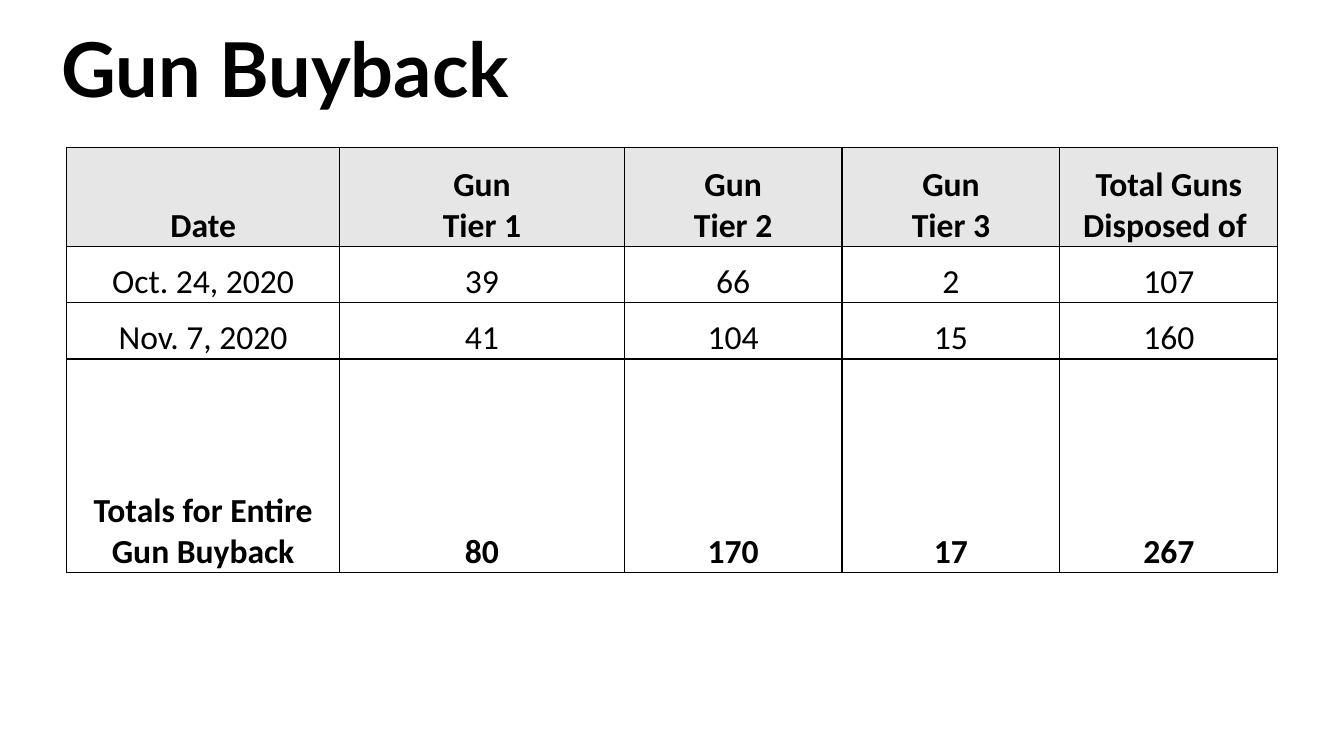
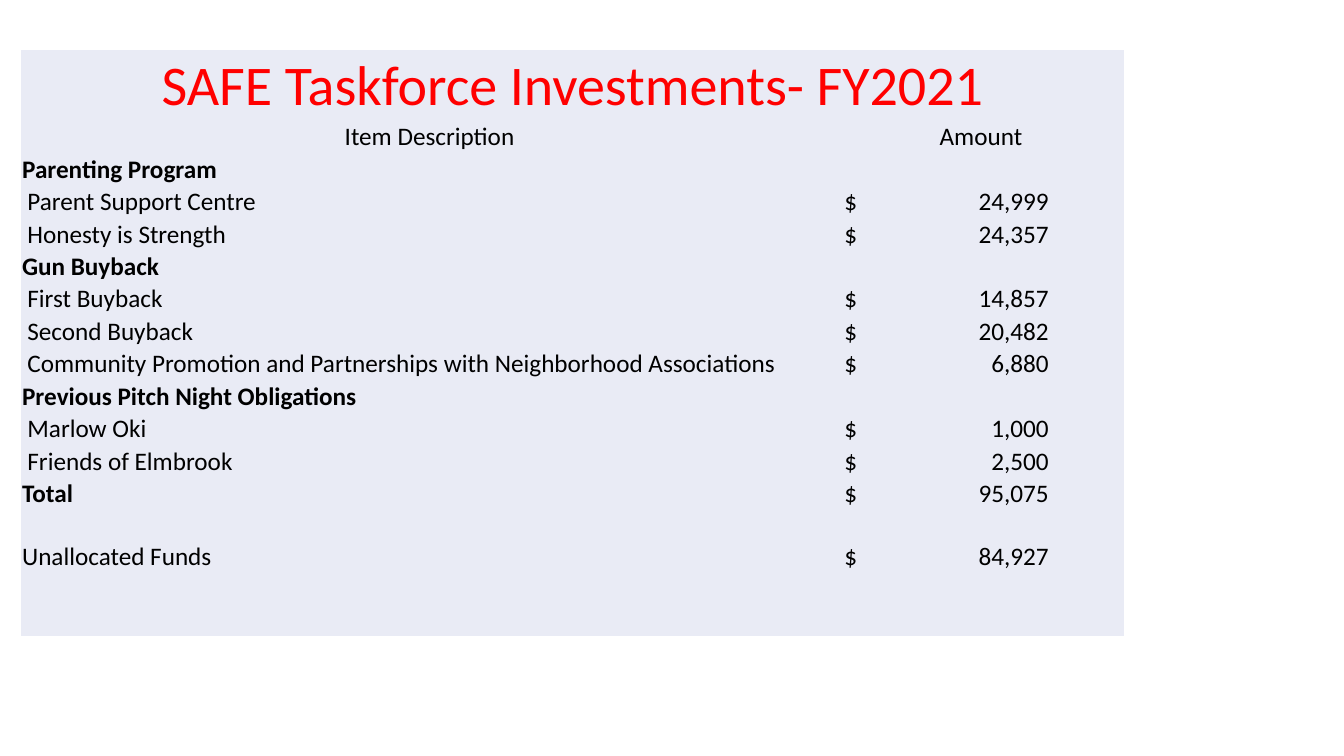
"""Build two slides: gun buyback counts and taskforce investments."""
from lxml import etree
from pptx import Presentation
from pptx.dml.color import RGBColor
from pptx.enum.text import MSO_ANCHOR, PP_ALIGN
from pptx.oxml.ns import qn
from pptx.util import Pt

LEFT, MID = PP_ALIGN.LEFT, PP_ALIGN.CENTER
LOW, HALF = MSO_ANCHOR.BOTTOM, MSO_ANCHOR.MIDDLE
BLACK, RED, GREY, PALE = "000000", "FF0000", "E7E6E6", "E9EBF5"
BODY, HEAD = "Calibri", "Lato"
PLAIN = "{2D5ABB26-0587-4C30-8999-92F81FD0307C}"
EDGES = ("a:lnL", "a:lnR", "a:lnT", "a:lnB")

TITLE = "Gun Buyback"
COUNTS = [
    ("Date", "Gun\nTier 1", "Gun\nTier 2", "Gun\nTier 3", "Total Guns Disposed of "),
    ("Oct. 24, 2020", "39", "66", "2", "107"),
    ("Nov. 7, 2020", "41", "104", "15", "160"),
    ("Totals for Entire Gun Buyback", "80", "170", "17", "267"),
]
COUNT_COLS = [195.2, 203.2] + [155.6] * 3
COUNT_ROWS = [70.4, 40.3, 40.3, 152.6]

FUNDS = "SAFE Taskforce Investments- FY2021"
HEADS = ("Item Description", "Amount")
GROUPS = [
    ("Parenting Program", "", [
        ("Parent Support Centre", "24,999"),
        ("Honesty is Strength", "24,357")]),
    ("Gun Buyback", "", [
        ("First Buyback", "14,857"),
        ("Second Buyback", "20,482"),
        ("Community Promotion and Partnerships with Neighborhood Associations", "6,880")]),
    ("Previous Pitch Night Obligations", "", [
        ("Marlow Oki", "1,000"),
        ("Friends of Elmbrook", "2,500")]),
    ("Total", "95,075", []),
]
REST = ("Unallocated Funds", "84,927")
FUND_COLS = [583.5, 204.2]
FUND_ROWS = [49.7] + [23.2] * 12 + [44.6, 45.7]
STEP, STOP = 4.5, 146


def tint(code):
    return RGBColor.from_string(code)


def write(frame, text, size, font=BODY, color=BLACK, bold=False, align=LEFT):
    para = frame.paragraphs[0]
    para.alignment = align
    for i, line in enumerate(text.split("\n")):
        if i:
            para.add_line_break()
        run = para.add_run()
        run.text = line
        face = run.font
        face.size, face.name, face.bold = Pt(size), font, bold
        face.color.rgb = tint(color)
    return para


def grid(slide, x, y, cols, rows, pad):
    frame = slide.shapes.add_table(
        len(rows), len(cols), Pt(x), Pt(y), Pt(sum(cols)), Pt(sum(rows)))
    table = frame.table
    table.first_row = table.horz_banding = False
    table._tbl.tblPr.find(qn("a:tableStyleId")).text = PLAIN
    for col, wide in zip(table.columns, cols):
        col.width = Pt(wide)
    for row, high in zip(table.rows, rows):
        row.height = Pt(high)
    for cell in table.iter_cells():
        cell.vertical_anchor = LOW
        cell.margin_left = cell.margin_right = Pt(pad)
        cell.margin_top = cell.margin_bottom = 0
    return table


def shade(cell, code):
    cell.fill.solid()
    cell.fill.fore_color.rgb = tint(code)


def frame_cell(cell):
    props = cell._tc.get_or_add_tcPr()
    for i, edge in enumerate(EDGES):
        line = etree.Element(qn(edge), w=str(Pt(1)))
        fill = etree.SubElement(line, qn("a:solidFill"))
        etree.SubElement(fill, qn("a:srgbClr"), val=BLACK)
        props.insert(i, line)


def set_stop(para):
    props = para._p.get_or_add_pPr()
    stops = etree.SubElement(props, qn("a:tabLst"))
    etree.SubElement(stops, qn("a:tab"), pos=str(Pt(STOP)), algn="r")


def count_slide(deck):
    slide = deck.slides.add_slide(deck.slide_layouts[5])
    table = grid(slide, 47.5, 105.5, COUNT_COLS, COUNT_ROWS, 5)
    last = len(COUNTS) - 1
    for r, row in enumerate(COUNTS):
        for c, text in enumerate(row):
            cell = table.cell(r, c)
            write(cell.text_frame, text, 24, bold=r in (0, last), align=MID)
            if r == 0:
                shade(cell, GREY)
            else:
                cell.fill.background()
            frame_cell(cell)
    title = slide.shapes.title
    title.left, title.top, title.width, title.height = Pt(36.7), 0, Pt(923), Pt(104.4)
    title.text_frame.vertical_anchor = HALF
    write(title.text_frame, TITLE, 54, HEAD, bold=True).line_spacing = 0.9


def fund_slide(deck):
    slide = deck.slides.add_slide(deck.slide_layouts[6])
    table = grid(slide, 15.1, 36, FUND_COLS, FUND_ROWS, 0.7)
    for cell in table.iter_cells():
        shade(cell, PALE)
    top = table.cell(0, 0)
    top.merge(table.cell(0, 1))
    write(top.text_frame, FUNDS, 40, color=RED, align=MID)
    for c, text in enumerate(HEADS):
        write(table.cell(1, c).text_frame, text, 18, align=MID)
    lines = []
    for name, total, items in GROUPS:
        lines.append((name, total, True, False))
        lines += [(item, cost, False, True) for item, cost in items]
    lines.append((*REST, False, False))
    for r, (name, cost, bold, inner) in enumerate(lines, 2):
        label, value = table.cell(r, 0), table.cell(r, 1)
        if inner:
            label.margin_left = Pt(STEP)
        write(label.text_frame, name, 18, bold=bold)
        if cost:
            value.margin_left = Pt(STEP)
            set_stop(write(value.text_frame, "$\t" + cost, 18))


def main():
    deck = Presentation()
    deck.slide_width, deck.slide_height = Pt(960), Pt(540)
    count_slide(deck)
    fund_slide(deck)
    deck.save("out.pptx")


if __name__ == "__main__":
    main()
